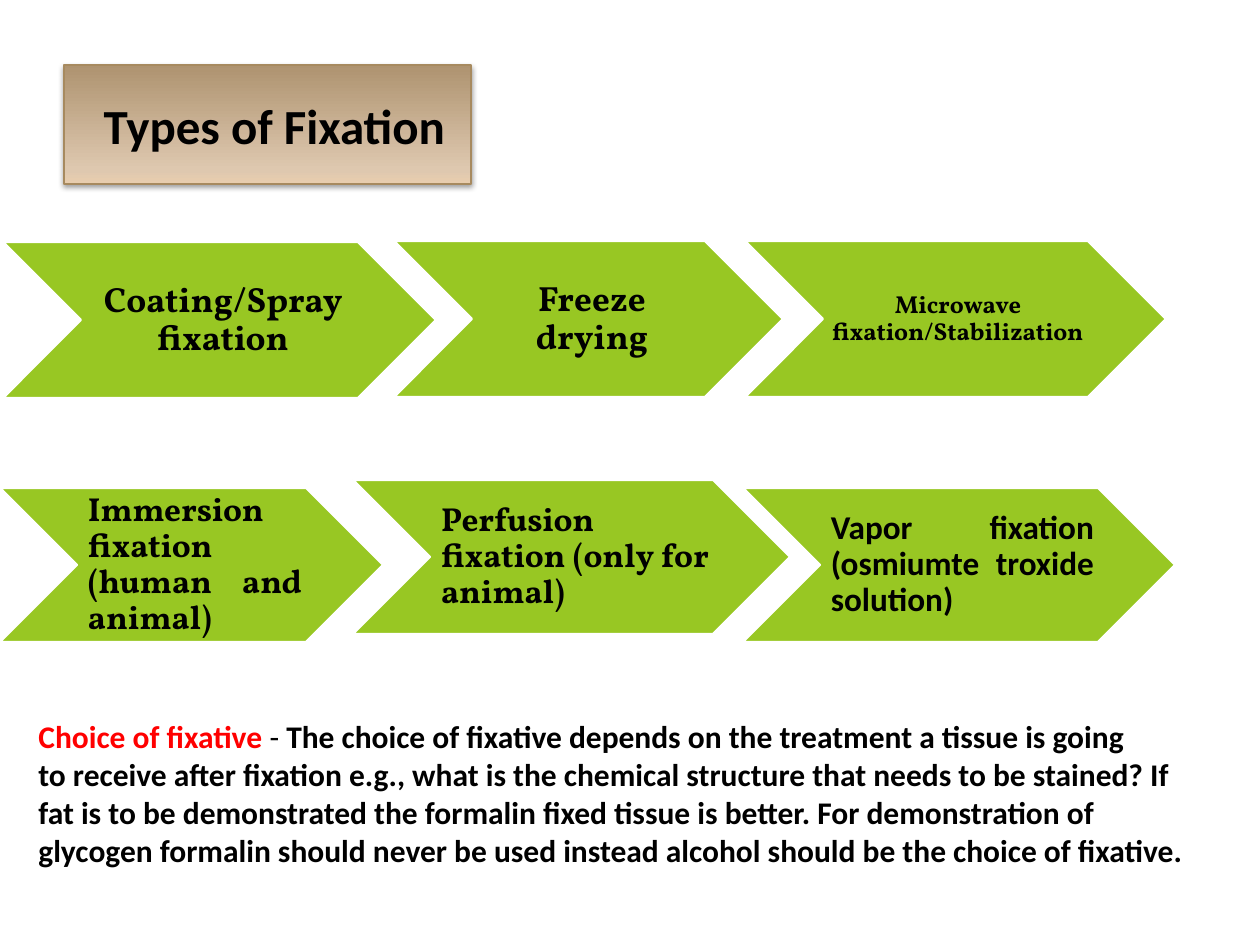
from copy import deepcopy

from lxml import etree
from pptx import Presentation
from pptx.dml.color import RGBColor
from pptx.enum.shapes import MSO_SHAPE
from pptx.enum.text import MSO_ANCHOR, PP_ALIGN
from pptx.oxml import parse_xml
from pptx.oxml.ns import nsdecls, qn
from pptx.util import Pt

EMU_PER_PX = 914400 / 126
RECTANGLE, CHEVRON = MSO_SHAPE.RECTANGLE, MSO_SHAPE.CHEVRON
MIDDLE, TOP = MSO_ANCHOR.MIDDLE, MSO_ANCHOR.TOP
CENTER, JUSTIFY = PP_ALIGN.CENTER, PP_ALIGN.JUSTIFY

BLACK = RGBColor(0x00, 0x00, 0x00)
WHITE = RGBColor(0xFF, 0xFF, 0xFF)
RED = RGBColor(0xFF, 0x00, 0x00)
GREEN = RGBColor(0x98, 0xC7, 0x23)
BROWN = RGBColor(0xA7, 0x8A, 0x5F)
TITLE_GRADIENT = [
    (0, RGBColor(0xE8, 0xCD, 0xAE)),
    (0.12, RGBColor(0xDE, 0xC8, 0xAF)),
    (1, RGBColor(0xAE, 0x93, 0x70)),
]

SANS, SERIF = "Calibri", "Vollkorn"

# left, top, width, text, font, size
SPECIAL_METHODS = [
    (3, 242, 433, "Coating/Spray fixation", SERIF, 20),
    (394, 241, 389, "Freeze drying", SERIF, 20),
    (745, 241, 421, "Microwave fixation/Stabilization", SERIF, 14),
]
COMMON_METHODS = [
    (0, 488, 383, "Immersion fixation (human and animal)", SERIF, 19),
    (353, 480, 437, "Perfusion fixation (only for animal)", SERIF, 19),
    (743, 488, 432, "Vapor fixation (osmiumte troxide solution)", SANS, 19),
]
CHOICE_LINES = [
    [("Choice of fixative ", RED, True), ("- ", BLACK, False),
     ("The choice of fixative depends on the treatment a tissue is going", BLACK, True)],
    [("to receive after fixation e.g., what is the chemical structure that needs "
      "to be stained? If", BLACK, True)],
    [("fat is to be demonstrated the formalin fixed tissue is better. "
      "For demonstration of", BLACK, True)],
    [("glycogen formalin should never be used instead alcohol should be "
      "the choice of fixative.", BLACK, True)],
]


def px(*lengths):
    return [round(length * EMU_PER_PX) for length in lengths]


class SlideBuilder:
    def __init__(self, slide):
        self.slide = slide

    def shape(self, kind, box, line_color, line_width):
        shape = self.slide.shapes.add_shape(kind, *px(*box))
        shape.shadow.inherit = False
        shape.line.color.rgb = line_color
        shape.line.width = Pt(line_width)
        return shape

    def add_runs(self, paragraph, runs, font, size, alignment):
        paragraph.alignment = alignment
        for text, color, bold in runs:
            run = paragraph.add_run()
            run.text = text
            run.font.name = font
            run.font.size = Pt(size)
            run.font.bold = bold
            run.font.color.rgb = color

    def text_box(self, box, lines, font, size, alignment, anchor=TOP, insets=None, spacing=None):
        frame = self.slide.shapes.add_textbox(*px(*box)).text_frame
        frame.word_wrap = True
        frame.vertical_anchor = anchor
        if insets:
            (frame.margin_left, frame.margin_top,
             frame.margin_right, frame.margin_bottom) = px(*insets)
        for index, runs in enumerate(lines):
            paragraph = frame.add_paragraph() if index else frame.paragraphs[0]
            paragraph.line_spacing = spacing
            self.add_runs(paragraph, runs, font, size, alignment)

    def title(self, box, text):
        shape = self.shape(RECTANGLE, box, BROWN, 0.75)
        shape.fill.gradient()
        shape.fill.gradient_angle = 90
        stops = shape._element.spPr.find(qn("a:gradFill")).find(qn("a:gsLst"))
        stops.insert(1, deepcopy(stops[0]))
        for stop, (position, color) in zip(shape.fill.gradient_stops, TITLE_GRADIENT):
            stop.position = position
            stop.color.rgb = color
        self.drop_shadow(shape)
        frame = shape.text_frame
        frame.word_wrap = True
        frame.vertical_anchor = MIDDLE
        paragraph = frame.paragraphs[0]
        self.add_runs(paragraph, [(text, BLACK, True)], SANS, 28, CENTER)
        paragraph._p.get_or_add_pPr().set("rtl", "1")

    def drop_shadow(self, shape):
        effects = shape._element.spPr.find(qn("a:effectLst"))
        shadow = parse_xml(
            f'<a:outerShdw {nsdecls("a")} blurRad="39370" dist="20320" dir="5400000" '
            'rotWithShape="0"/>')
        color = etree.SubElement(shadow, qn("a:srgbClr"), val=str(BLACK))
        etree.SubElement(color, qn("a:alpha"), val="38000")
        effects.append(shadow)

    def chevron(self, left, top, width, height, text, font, size, alignment):
        """Draw a chevron with its text between the notch and the point."""
        shape = self.shape(CHEVRON, (left, top, width, height), WHITE, 1.25)
        shape.fill.solid()
        shape.fill.fore_color.rgb = GREEN
        inner_box = (left + height // 2, top, width - height, height)
        insets = (8, 3, 3, 3) if size < 16 else (11, 4, 4, 4)
        self.text_box(inner_box, [[(text, BLACK, True)]], font, size, alignment,
                      MIDDLE, insets, 0.9)


def main():
    presentation = Presentation()
    presentation.slide_width, presentation.slide_height = px(1260, 945)
    builder = SlideBuilder(presentation.slides.add_slide(presentation.slide_layouts[6]))

    builder.title((64, 65, 407, 119), "Types of Fixation ")
    for methods, height, alignment in ((COMMON_METHODS, 154, JUSTIFY),
                                       (SPECIAL_METHODS, 156, CENTER)):
        for left, top, width, text, font, size in methods:
            builder.chevron(left, top, width, height, text, font, size, alignment)
    builder.text_box((26, 711, 1171, 165), CHOICE_LINES, SANS, 18, JUSTIFY)

    presentation.save("out.pptx")


if __name__ == "__main__":
    main()
